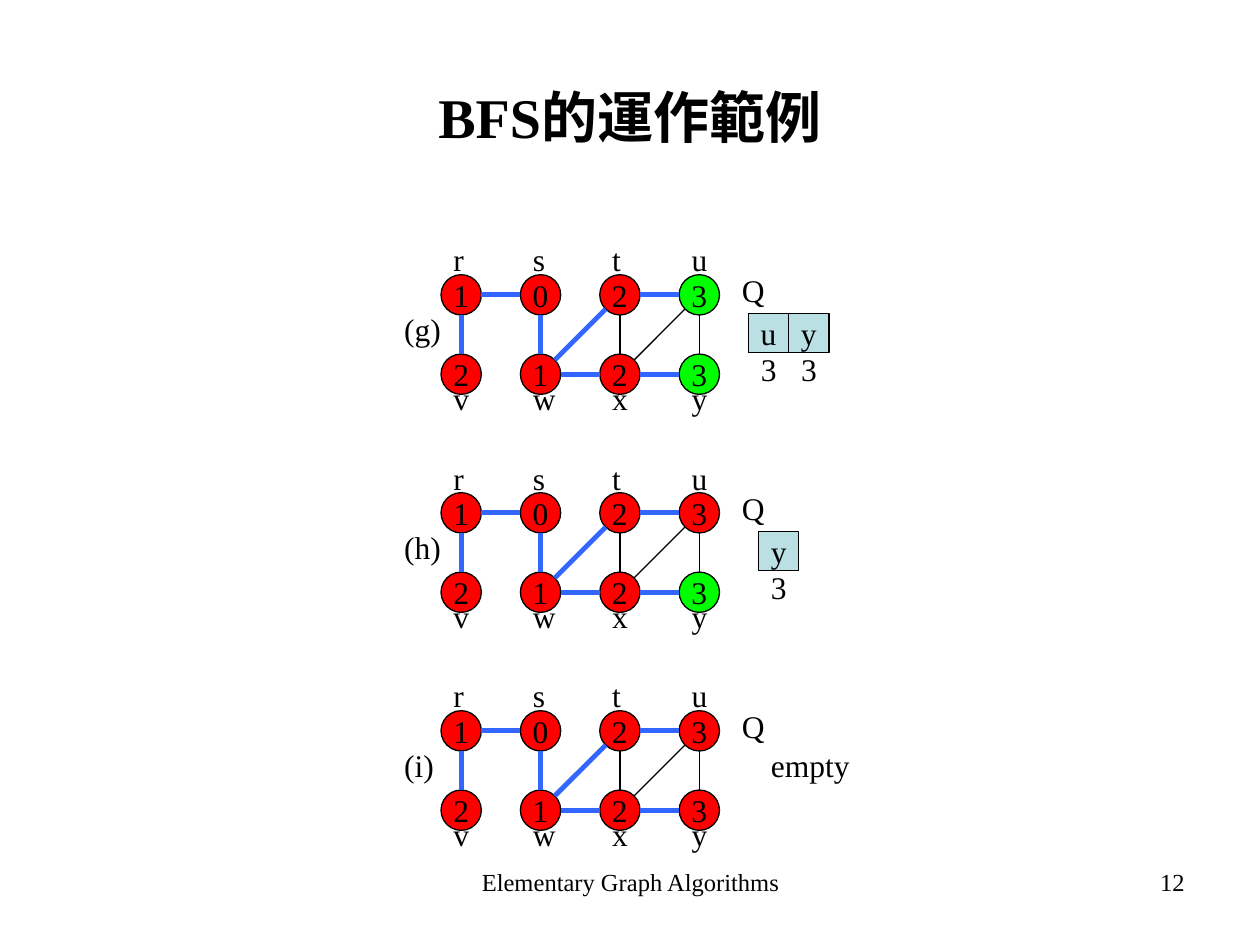
from math import hypot
from lxml.etree import SubElement
from pptx import Presentation
from pptx.dml.color import RGBColor
from pptx.enum.shapes import MSO_CONNECTOR as LINE, MSO_SHAPE as SHAPE
from pptx.enum.text import MSO_ANCHOR as ANCHOR, MSO_AUTO_SIZE as AUTO, PP_ALIGN as ALIGN
from pptx.oxml.ns import qn
from pptx.util import Inches, Pt

FONT = "Times New Roman"
BLACK, RED, GREEN, BLUE, TEAL = "000000", "FF0000", "00FF00", "3366FF", "BBE0E3"

TITLE = "BFS的運作範例"
FOOTERS = [
    ("Elementary Graph Algorithms", 3.42, 3.17, ALIGN.CENTER),
    ("12", 7.17, 2.33, ALIGN.RIGHT),
]
ROWS = ["rstu", "vwxy"]
DISTANCES = dict(r=1, s=0, t=2, u=3, v=2, w=1, x=2, y=3)
TREE_EDGES = ["rv", "rs", "sw", "wt", "xw", "xy", "tu"]
OTHER_EDGES = ["tx", "uy", "ux"]
STEPS = [
    dict(label="(g)", queue="uy", queue_left=5.94),
    dict(label="(h)", queue="y", queue_left=6.02),
    dict(label="(i)", queue="", queue_left=6.02),
]
LEFT, TOP, STEP_PITCH = 3.5, 2.18, 1.73
SIZE, PITCH = 0.32, 0.63


def color(value):
    return RGBColor.from_string(value)


def write(frame, text, size=18, align=ALIGN.LEFT, bold=False):
    frame.text = text
    para = frame.paragraphs[0]
    para.alignment = align
    para.font.name = FONT
    para.font.size = Pt(size)
    para.font.bold = bold
    para.font.color.rgb = color(BLACK)


def add_text(page, text, left, top, width, height=0.4, size=18, align=ALIGN.LEFT):
    box = page.shapes.add_textbox(Inches(left), Inches(top), Inches(width), Inches(height))
    box.text_frame.word_wrap = True
    if height == 0.4:
        box.text_frame.auto_size = AUTO.SHAPE_TO_FIT_TEXT
    write(box.text_frame, text, size, align)


def add_cell(page, kind, text, left, top, fill, height=SIZE):
    cell = page.shapes.add_shape(kind, Inches(left), Inches(top), Inches(SIZE), Inches(height))
    cell.shadow.inherit = False
    cell.fill.solid()
    cell.fill.fore_color.rgb = color(fill)
    cell.line.color.rgb = color(BLACK)
    cell.line.width = Pt(0.75)
    cell.text_frame.word_wrap = False
    cell.text_frame.vertical_anchor = ANCHOR.MIDDLE
    write(cell.text_frame, text, align=ALIGN.CENTER)


def add_edge(page, start, end, stroke, width):
    dx, dy = end[0] - start[0], end[1] - start[1]
    trim = SIZE / 2 / hypot(dx, dy)
    points = (start[0] + dx * trim, start[1] + dy * trim,
              end[0] - dx * trim, end[1] - dy * trim)
    edge = page.shapes.add_connector(LINE.STRAIGHT, *[Inches(value) for value in points])
    edge.line.color.rgb = color(stroke)
    edge.line.width = Pt(width)
    SubElement(edge._element.spPr, qn("a:effectLst"))


def add_graph(page, top, queue):
    corners = {name: (LEFT + column * PITCH, top + row * PITCH)
               for row, names in enumerate(ROWS) for column, name in enumerate(names)}
    centers = {name: (x + SIZE / 2, y + SIZE / 2) for name, (x, y) in corners.items()}
    for name, (x, y) in corners.items():
        add_cell(page, SHAPE.OVAL, str(DISTANCES[name]), x, y, GREEN if name in queue else RED)
    for edges, stroke, width in ((TREE_EDGES, BLUE, 2.75), (OTHER_EDGES, BLACK, 0.75)):
        for start, end in edges:
            add_edge(page, centers[start], centers[end], stroke, width)
    for name, (x, y) in corners.items():
        add_text(page, name, x, y + (-0.32 if name in ROWS[0] else 0.15), 0.31)


def add_queue(page, top, queue, left):
    add_text(page, "Q", 5.79, top - 0.08, 0.47)
    for index, name in enumerate(queue):
        x = left + index * SIZE
        add_cell(page, SHAPE.RECTANGLE, name, x, top + 0.31, TEAL, 0.31)
        add_text(page, str(DISTANCES[name]), x, top + 0.55, SIZE)
    if not queue:
        add_text(page, "empty", left, top + 0.23, 0.87)


def main():
    deck = Presentation()
    deck.slide_width, deck.slide_height = Inches(10), Inches(7.5)
    page = deck.slides.add_slide(deck.slide_layouts[5])

    title = page.shapes.title
    title.left, title.top = Inches(0.5), Inches(0.3)
    title.width, title.height = Inches(9), Inches(1.25)
    title.text_frame.vertical_anchor = ANCHOR.MIDDLE
    write(title.text_frame, TITLE, 32, ALIGN.CENTER, True)

    for text, left, width, align in FOOTERS:
        add_text(page, text, left, 6.83, width, 0.52, 14, align)

    for index, step in enumerate(STEPS):
        top = TOP + index * STEP_PITCH
        add_graph(page, top, step["queue"])
        add_text(page, step["label"], 3.11, top + 0.23, 0.63)
        add_queue(page, top, step["queue"], step["queue_left"])

    deck.save("out.pptx")


if __name__ == "__main__":
    main()
